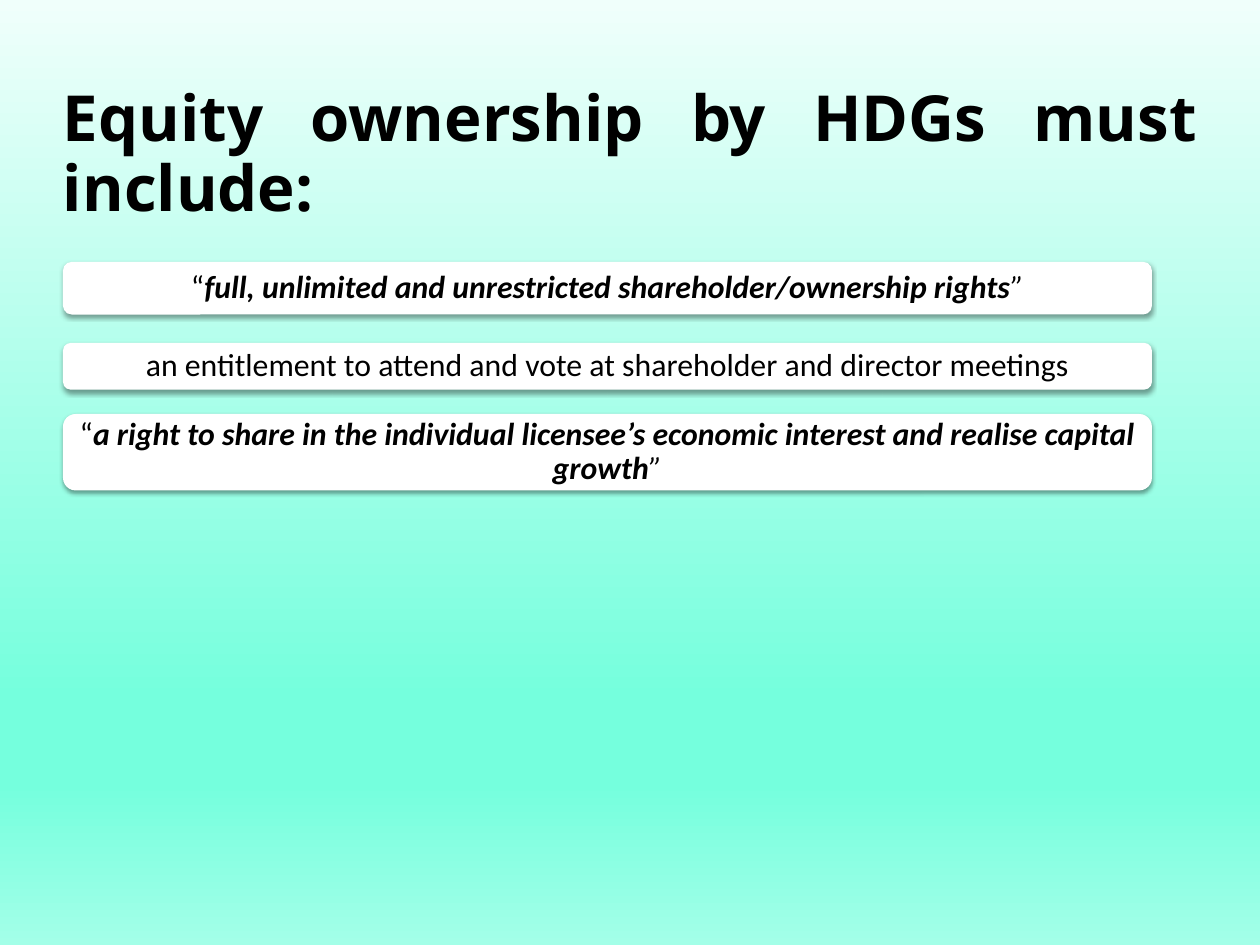
"""Build the slide on equity ownership by HDGs."""
from lxml import etree
from pptx import Presentation
from pptx.dml.color import RGBColor
from pptx.enum import shapes, text
from pptx.oxml import ns
from pptx import util as u

COLOURS = {
    "ink": "000000",
    "bar": "FFFFFF",
    "pale": "F0FFFB",
    "mint": "75FFDD",
    "foot": "A3FFE8",
}
BACKGROUND_STOPS = [(0, "pale"), (74, "mint"), (83, "mint"), (100, "foot")]
LEFT = 1.4
REQUIREMENTS = [
    (5.82, 1.17, "full, unlimited and unrestricted shareholder/ownership rights", True),
    (7.62, 1.04, "an entitlement to attend and vote at shareholder and director meetings", False),
    (9.2, 1.7, "a right to share in the individual licensee’s economic interest "
               "and realise capital growth", True),
]


class SlideBuilder:
    """Hold the style and the current slide."""

    title_font = "Open Sans"
    body_font = "Calibri"

    def __init__(self, presentation):
        """Add a title-only slide."""
        self.slide = presentation.slides.add_slide(presentation.slide_layouts[5])

    def colour(self, name):
        """Return a named colour."""
        return RGBColor.from_string(COLOURS[name])

    def add_element(self, parent, tag, **attributes):
        """Append a drawing element to a parent."""
        return etree.SubElement(parent, ns.qn(tag), attributes)

    def background(self, stops):
        """Fill the background with a gradient from top to bottom."""
        fill = self.slide.background.fill
        fill.gradient()
        fill.gradient_angle = 270
        stop_list = self.slide.element.find(".//" + ns.qn("a:gsLst"))
        for stop in list(stop_list):
            stop_list.remove(stop)
        for position, name in stops:
            stop = self.add_element(stop_list, "a:gs", pos=str(position * 1000))
            self.add_element(stop, "a:srgbClr", val=COLOURS[name])

    def frame(self, shape, inset):
        """Set up a text frame and return it."""
        frame = shape.text_frame
        frame.word_wrap = True
        frame.auto_size = text.MSO_AUTO_SIZE.NONE
        frame.vertical_anchor = text.MSO_ANCHOR.MIDDLE
        frame.margin_left = frame.margin_right = u.Cm(inset)
        frame.margin_top = frame.margin_bottom = 0
        return frame

    def run(self, paragraph, words, font, size, bold=False, italic=False):
        """Add one formatted run."""
        run = paragraph.add_run()
        run.text = words
        run.font.name = font
        run.font.size = u.Pt(size)
        run.font.bold = bold
        run.font.italic = italic
        run.font.color.rgb = self.colour("ink")

    def title(self, words):
        """Place and format the title."""
        shape = self.slide.shapes.title
        shape.left, shape.top = u.Cm(LEFT), u.Cm(1.7)
        shape.width, shape.height = u.Cm(25.2), u.Cm(3.5)
        paragraph = self.frame(shape, 0).paragraphs[0]
        paragraph.alignment = text.PP_ALIGN.JUSTIFY
        paragraph.line_spacing = 0.93
        self.run(paragraph, words, self.title_font, 40, bold=True)

    def shadow(self, shape):
        """Give a shape a soft shadow below it."""
        shape.shadow.inherit = False
        effects = shape.element.spPr.find(ns.qn("a:effectLst"))
        shadow = self.add_element(
            effects, "a:outerShdw", blurRad=str(u.Pt(3.1)), dist=str(u.Pt(1.6)),
            dir="5400000", rotWithShape="0")
        tint = self.add_element(shadow, "a:srgbClr", val=COLOURS["ink"])
        self.add_element(tint, "a:alpha", val="38000")

    def bar(self, top, height, words, quoted):
        """Add a rounded bar holding one requirement."""
        shape = self.slide.shapes.add_shape(
            shapes.MSO_SHAPE.ROUNDED_RECTANGLE,
            u.Cm(LEFT), u.Cm(top), u.Cm(24.2), u.Cm(height))
        shape.fill.solid()
        shape.fill.fore_color.rgb = self.colour("bar")
        shape.line.fill.background()
        self.shadow(shape)
        paragraph = self.frame(shape, 0.25).paragraphs[0]
        paragraph.alignment = text.PP_ALIGN.CENTER
        paragraph.line_spacing = 0.9
        if quoted:
            self.run(paragraph, "“", self.body_font, 20)
        self.run(paragraph, words, self.body_font, 20, bold=quoted, italic=quoted)
        if quoted:
            self.run(paragraph, "”", self.body_font, 20, italic=True)


def main():
    """Build and save the presentation."""
    presentation = Presentation()
    presentation.slide_width, presentation.slide_height = u.Cm(28), u.Cm(21)
    builder = SlideBuilder(presentation)
    builder.background(BACKGROUND_STOPS)
    builder.title("Equity ownership by HDGs must include:")
    for requirement in REQUIREMENTS:
        builder.bar(*requirement)
    presentation.save("out.pptx")


if __name__ == "__main__":
    main()
